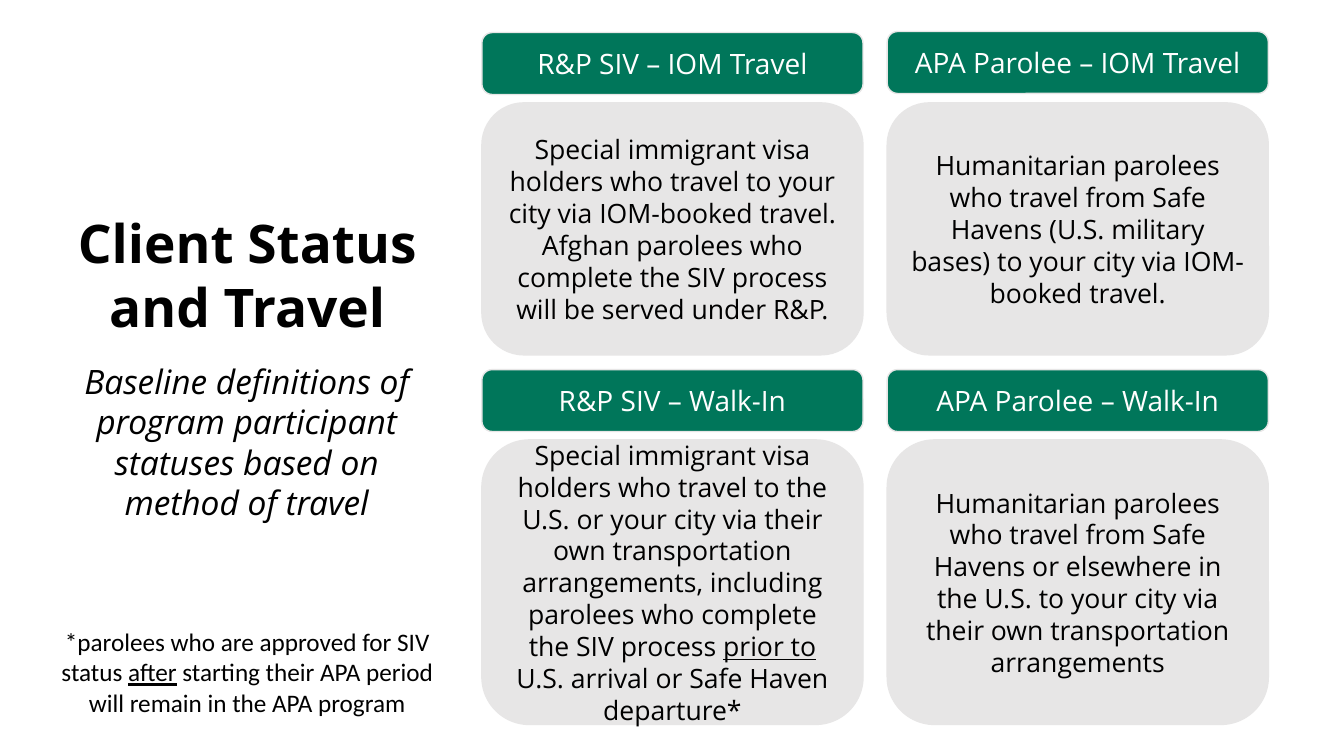
"""Builds a slide defining client statuses by method of travel."""
from dataclasses import dataclass

from pptx import Presentation
from pptx.dml.color import RGBColor
from pptx.enum.shapes import MSO_SHAPE
from pptx.enum.text import MSO_ANCHOR, MSO_AUTO_SIZE, PP_ALIGN
from pptx.util import Emu, Pt

ROUNDED = MSO_SHAPE.ROUNDED_RECTANGLE
MIDDLE = MSO_ANCHOR.MIDDLE
GROW = MSO_AUTO_SIZE.SHAPE_TO_FIT_TEXT
CENTER = PP_ALIGN.CENTER
PX = 9525


@dataclass(frozen=True)
class Theme:
    green: RGBColor = RGBColor(0x00, 0x76, 0x5A)
    grey: RGBColor = RGBColor(0xE7, 0xE6, 0xE6)
    black: RGBColor = RGBColor(0x00, 0x00, 0x00)
    white: RGBColor = RGBColor(0xFF, 0xFF, 0xFF)
    main_font: str = "Open Sans"
    note_font: str = "Calibri"
    title_size: int = 38
    subtitle_size: int = 24
    heading_size: int = 20
    definition_size: int = 19
    note_size: int = 18


THEME = Theme()


def write(frame, pieces, size, color, family=THEME.main_font, bold=False, italic=False):
    frame.word_wrap = True
    paragraph = frame.paragraphs[0]
    paragraph.alignment = CENTER
    for words, underlined in pieces:
        run = paragraph.add_run()
        run.text = words
        run.font.name = family
        run.font.size = Pt(size)
        run.font.color.rgb = color
        run.font.bold = bold
        run.font.italic = italic
        run.font.underline = underlined


def add_card(box, fill, pieces, size, color):
    card = slide.shapes.add_shape(ROUNDED, *(Emu(n * PX) for n in box))
    card.shadow.inherit = False
    card.fill.solid()
    card.fill.fore_color.rgb = fill
    card.line.color.rgb = THEME.grey
    card.line.width = Pt(1)
    card.text_frame.vertical_anchor = MIDDLE
    write(card.text_frame, pieces, size, color)


deck = Presentation()
deck.slide_width = Emu(1280 * PX)
deck.slide_height = Emu(720 * PX)
slide = deck.slides.add_slide(deck.slide_layouts[6])

side_texts = [
    ((36, 196, 399, 132), [("Client Status and Travel", False)],
     THEME.title_size, THEME.main_font, True, False),
    ((48, 339, 374, 165),
     [("Baseline definitions of program participant statuses based on method of travel", False)],
     THEME.subtitle_size, THEME.main_font, False, True),
    ((36, 592, 399, 97),
     [("*parolees who are approved for SIV status ", False),
      ("after", True),
      (" starting their APA period will remain in the APA program", False)],
     THEME.note_size, THEME.note_font, False, False),
]
for box, pieces, size, family, bold, italic in side_texts:
    side_text = slide.shapes.add_textbox(*(Emu(n * PX) for n in box))
    side_text.text_frame.auto_size = GROW
    write(side_text.text_frame, pieces, size, THEME.black, family, bold, italic)

column_lefts = (459, 845)
card_width = 363
heading_height = 59
definition_rows = ((98, 240), (419, 271))
statuses = [
    (0, 0, 31, "R&P SIV – IOM Travel",
     [("Special immigrant visa holders who travel to your city via IOM-booked travel. "
       "Afghan parolees who complete the SIV process will be served under R&P.", False)]),
    (0, 1, 30, "APA Parolee – IOM Travel",
     [("Humanitarian parolees who travel from Safe Havens (U.S. military bases) "
       "to your city via IOM-booked travel.", False)]),
    (1, 0, 352, "R&P SIV – Walk-In",
     [("Special immigrant visa holders who travel to the U.S. or your city via their own "
       "transportation arrangements, including parolees who complete the SIV process ", False),
      ("prior to ", True),
      ("U.S. arrival or Safe Haven departure*", False)]),
    (1, 1, 352, "APA Parolee – Walk-In",
     [("Humanitarian parolees who travel from Safe Havens or elsewhere in the U.S. "
       "to your city via their own transportation arrangements", False)]),
]
for row, column, heading_top, heading, definition in statuses:
    left = column_lefts[column]
    top, height = definition_rows[row]
    add_card((left, top, card_width, height), THEME.grey,
             definition, THEME.definition_size, THEME.black)
    add_card((left, heading_top, card_width, heading_height), THEME.green,
             [(heading, False)], THEME.heading_size, THEME.white)

deck.save("out.pptx")
